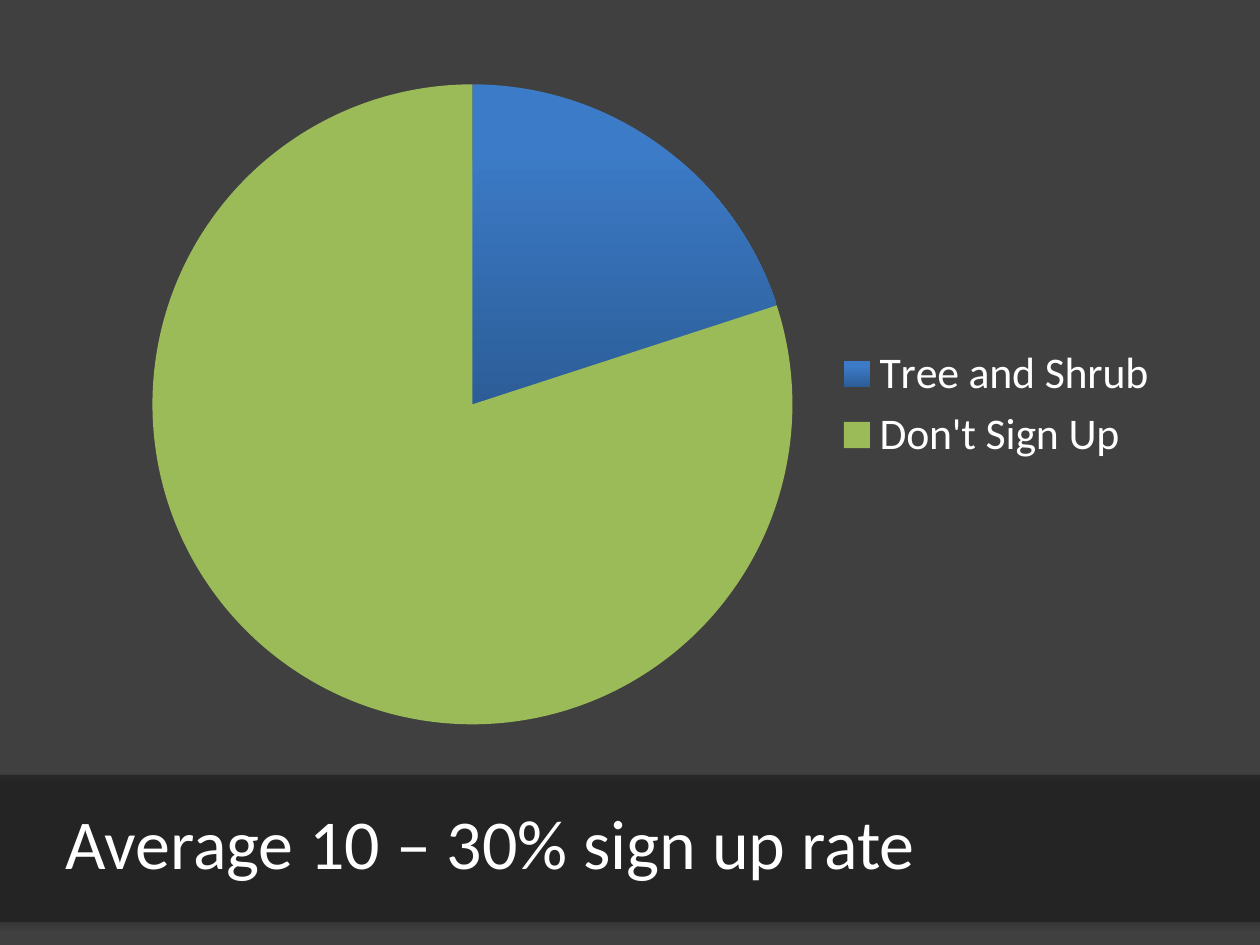
from lxml import etree
from pptx import Presentation
from pptx import util as u
from pptx.chart import data
from pptx.dml import color
from pptx.enum import chart as charts, shapes, text
from pptx.oxml import ns, parse_xml

FONT = "Calibri"
WHITE = "FFFFFF"


def rgb(value):
    return color.RGBColor.from_string(value)


def inches(box):
    return [u.Inches(length) for length in box]


def add_band(page, box, fill, alpha):
    band = page.shapes.add_shape(shapes.MSO_SHAPE.RECTANGLE, *inches(box))
    band.fill.solid()
    band.fill.fore_color.rgb = rgb(fill)
    band.line.fill.background()
    tint = band.fill._xPr.find(".//" + ns.qn("a:srgbClr"))
    etree.SubElement(tint, ns.qn("a:alpha")).set("val", str(alpha * 1000))
    band.shadow.inherit = False
    effects = band._element.spPr.find(ns.qn("a:effectLst"))
    effects.append(parse_xml(
        f'<a:outerShdw {ns.nsdecls("a")} blurRad="{u.Pt(3.1)}" dist="{u.Pt(1.8)}" '
        'dir="5400000" rotWithShape="0"><a:srgbClr val="000000">'
        '<a:alpha val="35000"/></a:srgbClr></a:outerShdw>'))


def add_text(page, box, words, size, fill):
    label = page.shapes.add_textbox(*inches(box))
    frame = label.text_frame
    frame.word_wrap = True
    frame.auto_size = text.MSO_AUTO_SIZE.SHAPE_TO_FIT_TEXT
    span = frame.paragraphs[0].add_run()
    span.text = words
    span.font.name = FONT
    span.font.size = u.Pt(size)
    span.font.color.rgb = rgb(fill)


def set_font(font, size):
    font.name = FONT
    font.size = u.Pt(size)
    font.color.rgb = rgb(WHITE)


def fix_plot_area(chart, box, pie_box):
    left, top, width, height = box
    pie_left, pie_top, pie_width, pie_height = pie_box
    ratios = {"x": (pie_left - left) / width, "y": (pie_top - top) / height,
              "w": pie_width / width, "h": pie_height / height}
    entries = "".join(f'<c:{key} val="{ratio:.4f}"/>' for key, ratio in ratios.items())
    area = chart._chartSpace.chart.plotArea
    for layout in area.findall(ns.qn("c:layout")):
        area.remove(layout)
    area.insert(0, parse_xml(
        f'<c:layout {ns.nsdecls("c")}><c:manualLayout><c:layoutTarget val="inner"/>'
        f'<c:xMode val="edge"/><c:yMode val="edge"/>{entries}</c:manualLayout></c:layout>'))


def add_pie(page, box, pie_box):
    shares = data.CategoryChartData()
    shares.categories = ["Tree and Shrub", "Don't Sign Up "]
    shares.add_series("Series 1", (20, 80))
    chart = page.shapes.add_chart(charts.XL_CHART_TYPE.PIE, *inches(box), shares).chart
    chart.has_title = False
    set_font(chart.font, 10)
    chart.has_legend = True
    chart.legend.position = charts.XL_LEGEND_POSITION.RIGHT
    chart.legend.include_in_layout = False
    set_font(chart.legend.font, 25)
    fix_plot_area(chart, box, pie_box)

    plot = chart.plots[0]
    plot.vary_by_categories = True
    sign_up, decline = (plot.series[0].points[index].format for index in range(2))
    sign_up.fill.gradient()
    sign_up.fill.gradient_angle = 270
    stops = ((0.2, "3C7BC7"), (1, "2C5D98"))
    for stop, (position, shade) in zip(sign_up.fill.gradient_stops, stops):
        stop.position = position
        stop.color.rgb = rgb(shade)
    decline.fill.solid()
    decline.fill.fore_color.rgb = rgb("9BBB59")
    for slice_format in (sign_up, decline):
        slice_format.line.fill.background()


def main():
    deck = Presentation()
    deck.slide_width, deck.slide_height = u.Inches(10), u.Inches(7.5)
    page = deck.slides.add_slide(deck.slide_layouts[6])
    page.background.fill.solid()
    page.background.fill.fore_color.rgb = rgb("404040")
    add_band(page, (-0.22, 6.15, 10.47, 1.17), "0D0D0D", 42)
    add_text(page, (0.42, 6.3, 9.52, 0.77), "Average 10 – 30% sign up rate", size=40, fill=WHITE)
    add_pie(page, (0.93, 0.53, 8.38, 5.36), (1.21, 0.67, 5.08, 5.08))
    deck.save("out.pptx")


if __name__ == "__main__":
    main()
